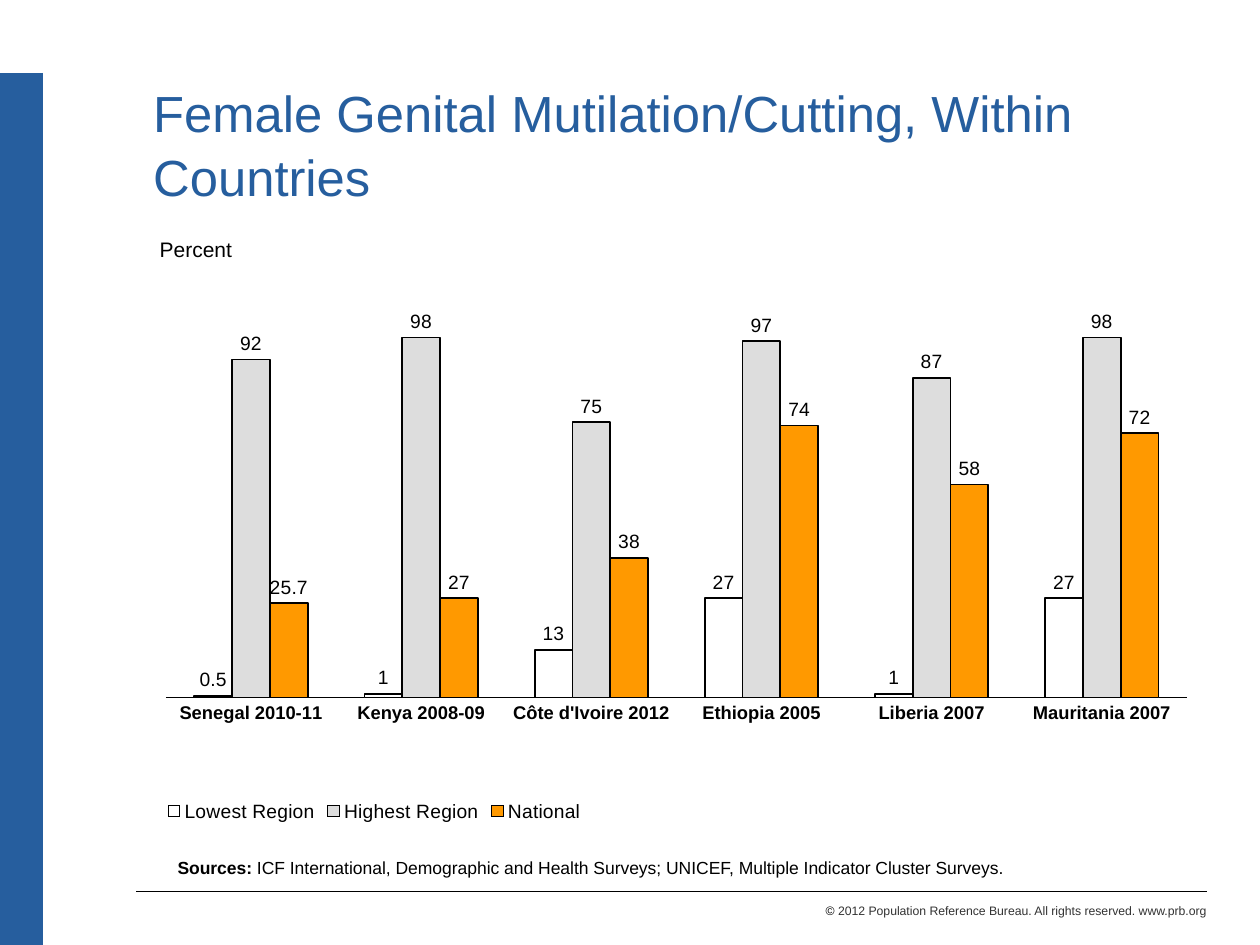
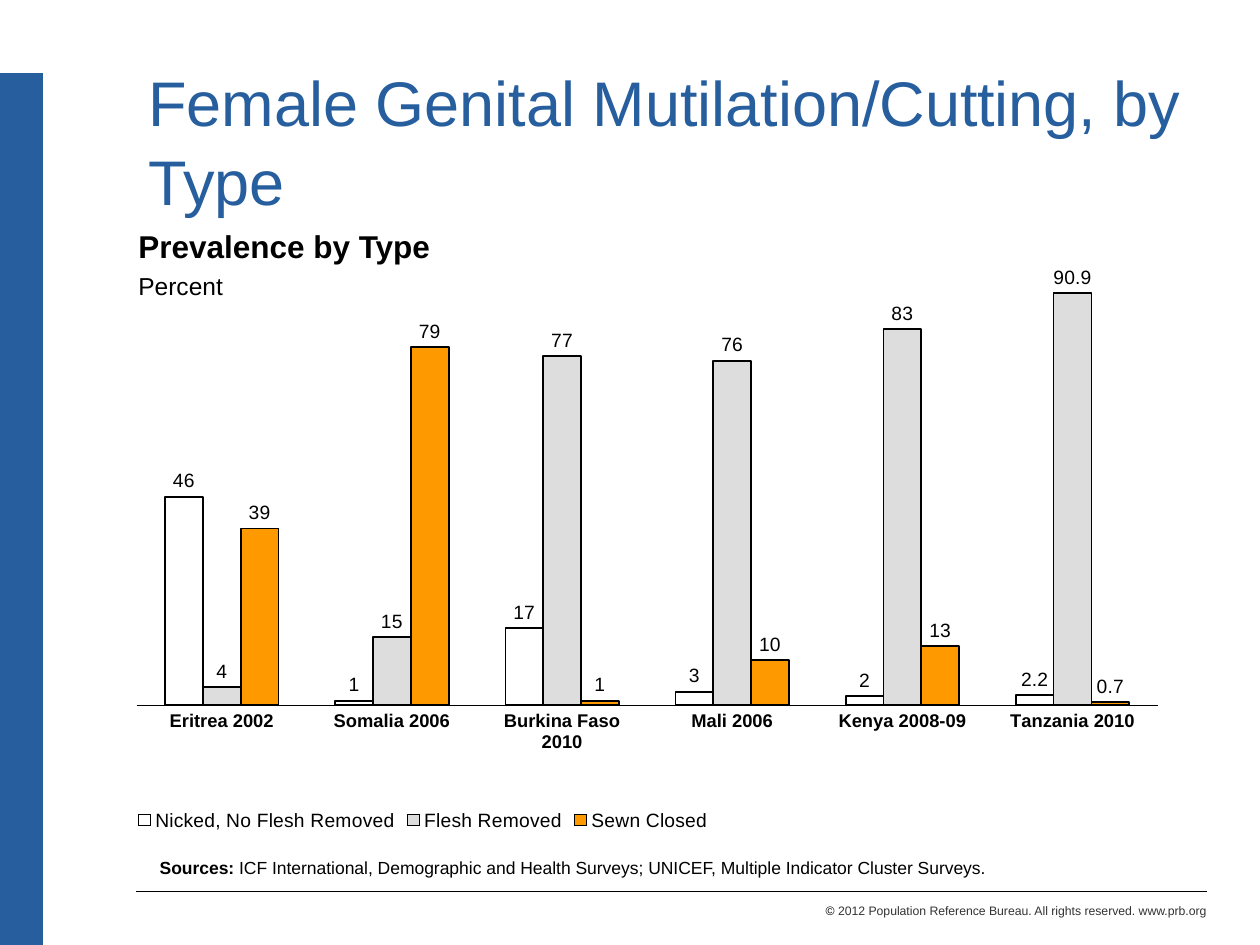
import pptx
import pptx.chart.data
import pptx.dml.color
import pptx.enum.chart
import pptx.enum.shapes
import pptx.enum.text
import pptx.oxml
import pptx.oxml.ns
import pptx.util
from pptx.util import Cm

BLUE, BLACK, GREY = "265E9E", "000000", "333333"
SERIES_FILLS = ["FFFFFF", "DDDDDD", "FF9900"]
SOURCES = " ICF International, Demographic and Health Surveys; UNICEF, Multiple Indicator Cluster Surveys."
COPYRIGHT = "2012 Population Reference Bureau. All rights reserved. www.prb.org"
LAYOUT_XML = '<c:layout %s><c:manualLayout>%s</c:manualLayout></c:layout>'


def style_font(font, size, colour=BLACK, bold=False):
    look = {"name": "Arial", "size": pptx.util.Pt(size), "bold": bold}
    for attribute, value in look.items():
        setattr(font, attribute, value)
    font.color.rgb = pptx.dml.color.RGBColor.from_string(colour)


def add_text(slide, place, paragraphs, **paragraph_format):
    frame = slide.shapes.add_textbox(*map(Cm, place)).text_frame
    frame.word_wrap = True
    frame.vertical_anchor = pptx.enum.text.MSO_ANCHOR.TOP
    for number, runs in enumerate(paragraphs):
        paragraph = frame.add_paragraph() if number else frame.paragraphs[0]
        if number:
            paragraph.space_before = pptx.util.Pt(3.5)
        for attribute, value in paragraph_format.items():
            setattr(paragraph, attribute, value)
        for words, *look in runs:
            run = paragraph.add_run()
            run.text = words
            style_font(run.font, *look)


slides = [
    {
        "title": "Female Genital Mutilation/Cutting, Within Countries",
        "title_size": 29,
        "title_place": (2.84, 1.47, 21.49, 2.74),
        "heading": [[("Percent", 12)]],
        "heading_place": (2.97, 4.65, 5.51, 0.76),
        "chart_place": (3.05, 4.9, 21.11, 11.81),
        "legend_corner": (0.01, 0.95),
        "sources_left": 3.33,
        "axis_top": 120,
        "countries": ["Senegal 2010-11", "Kenya 2008-09", "Côte d'Ivoire 2012",
                      "Ethiopia 2005", "Liberia 2007", "Mauritania 2007"],
        "series": {
            "Lowest Region": [0.5, 1, 13, 27, 1, 27],
            "Highest Region": [92, 98, 75, 97, 87, 98],
            "National": [25.7, 27, 38, 74, 58, 72],
        },
    },
    {
        "title": "Female Genital Mutilation/Cutting, by Type",
        "title_size": 36,
        "title_place": (2.74, 1.07, 21.49, 2.74),
        "heading": [[("Prevalence by Type", 18, BLACK, True)], [("Percent", 14)]],
        "heading_place": (2.54, 4.45, 21.59, 1.73),
        "chart_place": (2.46, 4.8, 21.11, 12.14),
        "legend_corner": (0.01, 0.94),
        "sources_left": 2.97,
        "axis_top": 100,
        "countries": ["Eritrea 2002", "Somalia 2006", "Burkina Faso 2010",
                      "Mali 2006", "Kenya 2008-09", "Tanzania 2010"],
        "series": {
            "Nicked, No Flesh Removed": [46, 1, 17, 3, 2, 2.2],
            "Flesh Removed": [4, 15, 77, 76, 83, 90.9],
            "Sewn Closed": [39, 79, 1, 10, 13, 0.7],
        },
    },
]
rules = [
    ((0.43, 1.47, 0.43, 19.05), BLUE, 25),
    ((24.33, 17.98, 2.74, 17.98), BLACK, 0.5),
]

deck = pptx.Presentation()
deck.slide_width, deck.slide_height = Cm(25.4), Cm(19.05)

for content in slides:
    slide = deck.slides.add_slide(deck.slide_layouts[6])

    for ends, colour, width in rules:
        rule = slide.shapes.add_connector(
            pptx.enum.shapes.MSO_CONNECTOR.STRAIGHT, *map(Cm, ends))
        rule.line.color.rgb = pptx.dml.color.RGBColor.from_string(colour)
        rule.line.width = pptx.util.Pt(width)
        rule._element.spPr.append(pptx.oxml.parse_xml(
            "<a:effectLst %s/>" % pptx.oxml.ns.nsdecls("a")))
    add_text(slide, (10.8, 18.08, 13.77, 0.56),
             [[("© ", 7), (COPYRIGHT, 7, GREY)]],
             alignment=pptx.enum.text.PP_ALIGN.RIGHT)
    add_text(slide, content["title_place"],
             [[(content["title"], content["title_size"], BLUE)]], line_spacing=1.05)

    prevalence = pptx.chart.data.CategoryChartData()
    prevalence.categories = content["countries"]
    for name, percents in content["series"].items():
        prevalence.add_series(name, percents)
    chart = slide.shapes.add_chart(
        pptx.enum.chart.XL_CHART_TYPE.COLUMN_CLUSTERED,
        *map(Cm, content["chart_place"]), prevalence).chart
    style_font(chart.font, 14, bold=True)
    chart.has_title = False

    columns = chart.plots[0]
    for attribute, value in {"gap_width": 150, "overlap": 0,
                             "vary_by_categories": False}.items():
        setattr(columns, attribute, value)
    for series, fill in zip(columns.series, SERIES_FILLS):
        series.format.fill.solid()
        series.format.fill.fore_color.rgb = pptx.dml.color.RGBColor.from_string(fill)
        series.format.line.color.rgb = pptx.dml.color.RGBColor.from_string(BLACK)
        series.format.line.width = pptx.util.Pt(1)
        series.invert_if_negative = False
        series.data_labels.show_value = True
        series.data_labels.position = pptx.enum.chart.XL_LABEL_POSITION.OUTSIDE_END
        style_font(series.data_labels.font, 11)

    countries = chart.category_axis
    countries.major_tick_mark = pptx.enum.chart.XL_TICK_MARK.NONE
    countries.format.line.color.rgb = pptx.dml.color.RGBColor.from_string(BLACK)
    countries.format.line.width = pptx.util.Pt(0.25)
    style_font(countries.tick_labels.font, 10.5, bold=True)
    for attribute, value in {"minimum_scale": 0, "maximum_scale": content["axis_top"],
                             "has_major_gridlines": False, "visible": False}.items():
        setattr(chart.value_axis, attribute, value)

    chart.has_legend = True
    chart.legend.position = pptx.enum.chart.XL_LEGEND_POSITION.BOTTOM
    chart.legend.include_in_layout = False
    style_font(chart.legend.font, 11)

    plot_area = chart._chartSpace.chart.plotArea
    for automatic in plot_area.findall(pptx.oxml.ns.qn("c:layout")):
        plot_area.remove(automatic)
    for parent, index, target, values in [
        (plot_area, 0, '<c:layoutTarget val="inner"/>',
         {"x": 0.014, "y": 0.023, "w": 0.975, "h": 0.753}),
        (chart.legend._element, 1, "", dict(zip("xy", content["legend_corner"]))),
    ]:
        modes = '<c:xMode val="edge"/><c:yMode val="edge"/>'
        sizes = "".join(f'<c:{key} val="{value}"/>' for key, value in values.items())
        parent.insert(index, pptx.oxml.parse_xml(
            LAYOUT_XML % (pptx.oxml.ns.nsdecls("c"), target + modes + sizes)))

    add_text(slide, content["heading_place"], content["heading"])
    add_text(slide, (content["sources_left"], 17.15, 21, 0.69),
             [[("Sources:", 10, BLACK, True), (SOURCES, 10)]])

deck.save("out.pptx")
